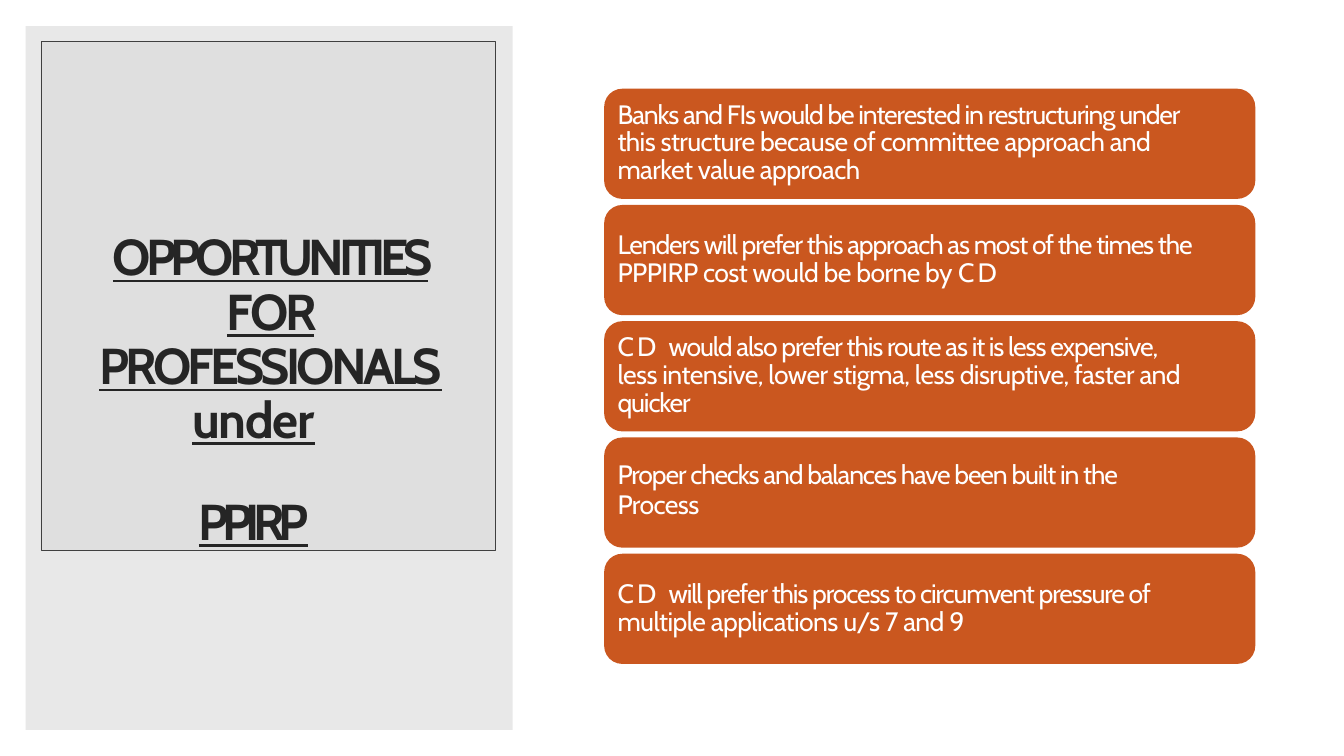
"""Builds the slide on opportunities for professionals under PPIRP."""
from lxml import etree
from pptx import Presentation
from pptx import util as u
from pptx.dml.color import RGBColor
from pptx.enum import shapes, text
from pptx.oxml.ns import qn

PANEL_GREY = RGBColor(0xD9, 0xD9, 0xD9)
BORDER_GREY = RGBColor(0x40, 0x40, 0x40)
TITLE_INK = RGBColor(0x25, 0x25, 0x25)
CARD_ORANGE = RGBColor(0xCA, 0x57, 0x1F)
WHITE = RGBColor(0xFF, 0xFF, 0xFF)

TITLE_FONT = {"name": "Cabin", "size": u.Pt(54), "bold": True, "underline": True}
CARD_FONT = {"name": "Cabin", "size": u.Pt(28.5)}
TIGHT, LOOSE, WIDE = -1.2, -0.6, 3.4

TITLE = [
    (0.58, 58.4, 0, [("OPPORTUNITIES ", -5.5), ("FOR ", -3.2), ("PROFESSIONALS", -4)]),
    (0.08, 57.4, 0, [("under", -1.4)]),
    (0.08, 57.4, 51.7, [("PPIRP", -7)]),
]

CARD_LEFT, CARD_TOP, CARD_WIDTH, CARD_HEIGHT, CARD_PITCH = 8.99, 1.32, 9.69, 1.64, 1.73
BODY_LEFT, BODY_WIDTH, BODY_RISE = 9.17, 9.4, 0.04
BODY_HEIGHTS = {2: 0.93, 3: 1.35}
NORMAL = {"leading": 29.7, "before": 6.1, "inset": 0.09}
AIRY = {"leading": 31.9, "before": 1.4, "inset": 0.02}

CARDS = [
    (NORMAL, [
        [("Banks and FIs would be interested in restructuring under", TIGHT)],
        [("this structure because of committee approach and", LOOSE)],
        [("market value approach", LOOSE)],
    ]),
    (NORMAL, [
        [("Lenders will prefer this approach as most of the times the", TIGHT)],
        [("PPPIRP cost would be borne by ", LOOSE), ("CD", WIDE)],
    ]),
    (NORMAL, [
        [("CD ", WIDE), ("would also prefer this route as it is less expensive,", TIGHT)],
        [("less intensive, lower stigma, less disruptive, faster and", LOOSE)],
        [("quicker", TIGHT)],
    ]),
    (AIRY, [
        [("Proper checks and balances have been built in the", TIGHT)],
        [("Process", LOOSE)],
    ]),
    (NORMAL, [
        [("CD ", WIDE), ("will prefer this process to circumvent pressure of", TIGHT)],
        [("multiple applications u/s 7 and 9", LOOSE)],
    ]),
]


class SlideBuilder:
    """Holds the current slide and draws its panels, cards and text."""

    def __init__(self, slide):
        self.slide = slide

    def box(self, kind, left, top, width, height, fill, alpha=None, border=None):
        """Draw a filled shape, optionally translucent or outlined."""
        shape = self.slide.shapes.add_shape(
            kind, *(u.Inches(v) for v in (left, top, width, height)))
        shape.shadow.inherit = False
        shape.fill.solid()
        shape.fill.fore_color.rgb = fill
        if alpha:
            colour = shape.fill._xPr.find(".//" + qn("a:srgbClr"))
            etree.SubElement(colour, qn("a:alpha")).set("val", str(alpha * 1000))
        if border:
            shape.line.color.rgb = border
            shape.line.width = u.Pt(0.5)
        else:
            shape.line.fill.background()
        return shape

    def frame(self, shape, **values):
        """Give a shape a wrapping frame without margins, then apply values."""
        defaults = {"word_wrap": True, "margin_left": 0, "margin_right": 0,
                    "margin_top": 0, "margin_bottom": 0}
        for name, value in {**defaults, **values}.items():
            setattr(shape.text_frame, name, value)
        return shape.text_frame

    def paragraph(self, paragraph, align, leading, before, left, right=0):
        """Set the alignment, spacing and indents of a paragraph."""
        values = {"alignment": align, "line_spacing": u.Pt(leading),
                  "space_before": u.Pt(before)}
        for name, value in values.items():
            setattr(paragraph, name, value)
        properties = paragraph._p.get_or_add_pPr()
        for name, value in {"marL": left, "marR": right, "indent": 0}.items():
            properties.set(name, str(u.Inches(value)))

    def runs(self, paragraph, pieces, font, colour):
        """Add runs that each have their own letter spacing."""
        for words, spacing in pieces:
            run = paragraph.add_run()
            run.text = words
            for name, value in font.items():
                setattr(run.font, name, value)
            run.font.color.rgb = colour
            run._r.get_or_add_rPr().set("spc", str(round(spacing * 100)))

    def title(self, panel, rows):
        """Write the underlined heading at the foot of its panel."""
        frame = self.frame(panel, vertical_anchor=text.MSO_ANCHOR.BOTTOM)
        for index, (left, leading, before, pieces) in enumerate(rows):
            row = frame.add_paragraph() if index else frame.paragraphs[0]
            self.paragraph(row, text.PP_ALIGN.CENTER, leading, before, left, 0.51)
            self.runs(row, pieces, TITLE_FONT, TITLE_INK)

    def card(self, top, style, lines):
        """Draw a rounded card with its text centred in height."""
        card = self.box(shapes.MSO_SHAPE.ROUNDED_RECTANGLE, CARD_LEFT, top,
                        CARD_WIDTH, CARD_HEIGHT, CARD_ORANGE)
        card.adjustments[0] = 0.165
        height = BODY_HEIGHTS[len(lines)]
        body_top = top + (CARD_HEIGHT - height) / 2 - BODY_RISE
        body = self.slide.shapes.add_textbox(
            *(u.Inches(v) for v in (BODY_LEFT, body_top, BODY_WIDTH, height)))
        frame = self.frame(body, margin_top=u.Inches(style["inset"]),
                           auto_size=text.MSO_AUTO_SIZE.SHAPE_TO_FIT_TEXT)
        statement = frame.paragraphs[0]
        self.paragraph(statement, text.PP_ALIGN.LEFT, style["leading"],
                       style["before"], 0.02)
        for index, pieces in enumerate(lines):
            if index:
                statement.add_line_break()
            self.runs(statement, pieces, CARD_FONT, WHITE)


def main():
    """Build and save the slide."""
    deck = Presentation()
    deck.slide_width, deck.slide_height = u.Inches(20), u.Inches(11.25)
    builder = SlideBuilder(deck.slides.add_slide(deck.slide_layouts[6]))
    rectangle = shapes.MSO_SHAPE.RECTANGLE
    builder.box(rectangle, 0.38, 0.39, 7.25, 10.47, PANEL_GREY, alpha=60)
    panel = builder.box(rectangle, 0.61, 0.62, 6.76, 7.57, PANEL_GREY,
                        alpha=60, border=BORDER_GREY)
    builder.title(panel, TITLE)
    for index, (style, lines) in enumerate(CARDS):
        builder.card(CARD_TOP + index * CARD_PITCH, style, lines)
    deck.save("out.pptx")


if __name__ == "__main__":
    main()
